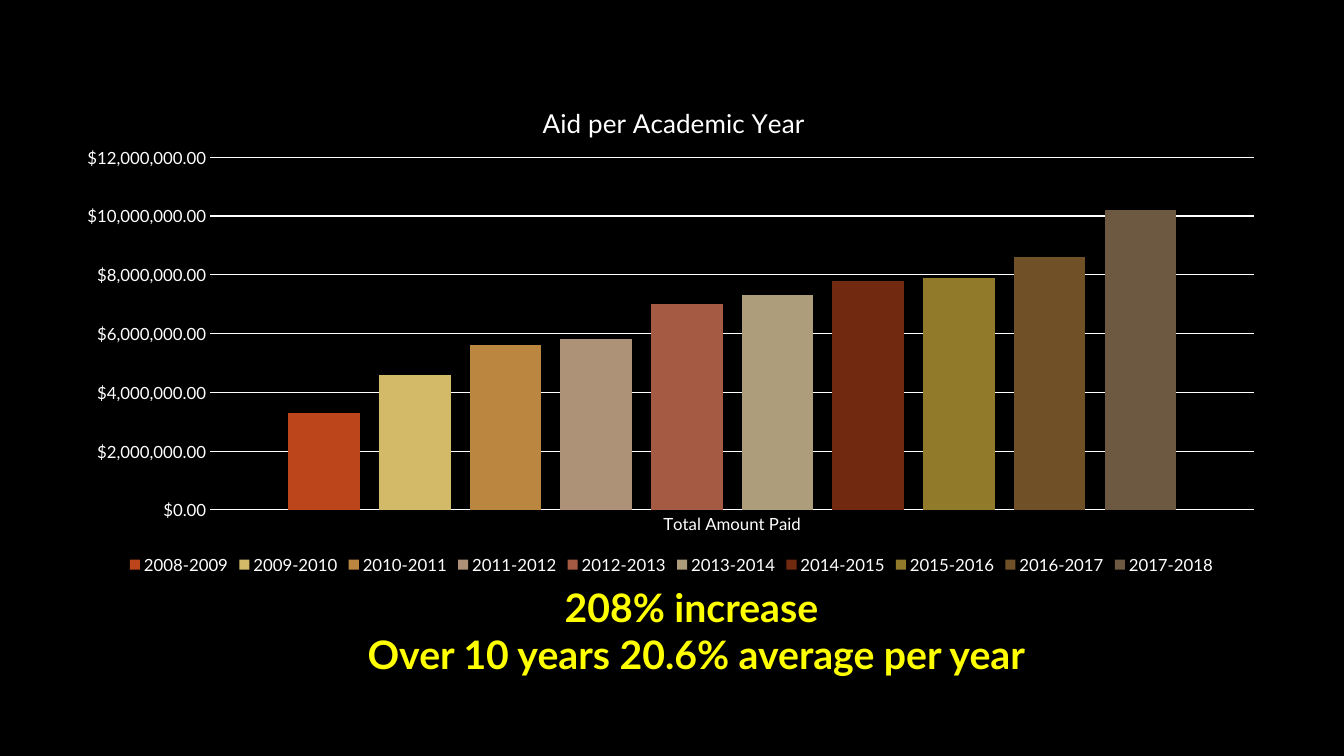
from lxml import etree
from pptx import Presentation
from pptx import util as u
from pptx.chart.data import CategoryChartData
from pptx.dml.color import RGBColor
from pptx.enum import chart as ch, text
from pptx.oxml import ns

FONT = "Lato"
COLORS = {"background": "000000", "chart": "FFFFFF", "callout": "FFFF00"}
AID = [  # academic year, total amount paid, bar colour
    ("2008-2009", 3300000, "BC451B"),
    ("2009-2010", 4600000, "D3BA68"),
    ("2010-2011", 5600000, "BB8640"),
    ("2011-2012", 5800000, "AD9277"),
    ("2012-2013", 7000000, "A55A43"),
    ("2013-2014", 7300000, "AD9D7B"),
    ("2014-2015", 7800000, "712910"),
    ("2015-2016", 7900000, "927A2B"),
    ("2016-2017", 8600000, "705026"),
    ("2017-2018", 10200000, "6D5842"),
]


def style_font(font, size, color, bold=False):
    font.name = FONT
    font.size = u.Pt(size)
    font.bold = bold
    font.color.rgb = RGBColor.from_string(COLORS[color])


def place(layout, **settings):
    """Give a chart part a manual layout, in fractions of the chart."""
    manual = etree.SubElement(layout, ns.qn("c:manualLayout"))
    for tag, value in settings.items():
        etree.SubElement(manual, ns.qn(f"c:{tag}")).set("val", str(value))


prs = Presentation()
prs.slide_width, prs.slide_height = u.Inches(13.33), u.Inches(7.5)
s = prs.slides.add_slide(prs.slide_layouts[6])
s.background.fill.solid()
s.background.fill.fore_color.rgb = RGBColor.from_string(COLORS["background"])

# Callout under the chart
sp = s.shapes.add_textbox(u.Inches(2.95), u.Inches(5.74), u.Inches(7.91), u.Inches(1.04))
tf = sp.text_frame
tf.word_wrap = True
tf.text = "208% increase \nOver 10 years 20.6% average per year"
for p in tf.paragraphs:
    p.alignment = text.PP_ALIGN.CENTER
    style_font(p.runs[0].font, 28, "callout", bold=True)

# Column chart, one series per academic year
data = CategoryChartData(number_format='"$"#,##0.00')
data.categories = ["Total Amount Paid"]
for year, amount, _ in AID:
    data.add_series(year, [amount])
chart = s.shapes.add_chart(
    ch.XL_CHART_TYPE.COLUMN_CLUSTERED,
    u.Inches(0.64), u.Inches(0.74), u.Inches(12.04), u.Inches(5), data).chart
style_font(chart.font, 10, "chart")
plot = chart.plots[0]
plot.vary_by_categories = False
plot.gap_width = 219
plot.overlap = -27
for series, (_, _, color) in zip(plot.series, AID):
    series.format.fill.solid()
    series.format.fill.fore_color.rgb = RGBColor.from_string(color)

# Chart title
chart.has_title = True
title = chart.chart_title
title.include_in_layout = False
title.text_frame.text = "Aid per Academic Year"
style_font(title.text_frame.paragraphs[0].runs[0].font, 18.6, "chart")

# Axes and gridlines
cat, val = chart.category_axis, chart.value_axis
for axis in (cat, val):
    axis.major_tick_mark = axis.minor_tick_mark = ch.XL_TICK_MARK.NONE
    style_font(axis.tick_labels.font, 12, "chart")
val.minimum_scale, val.maximum_scale, val.major_unit = 0, 12000000, 2000000
val.tick_labels.number_format = '"$"#,##0.00'
val.tick_labels.number_format_is_linked = False
val.format.line.fill.background()
val.has_major_gridlines = True
for line in (cat.format.line, val.major_gridlines.format.line):
    line.width = u.Pt(0.75)
    line.color.rgb = RGBColor.from_string(COLORS["chart"])

# Legend
chart.has_legend = True
chart.legend.position = ch.XL_LEGEND_POSITION.BOTTOM
chart.legend.include_in_layout = False
style_font(chart.legend.font, 12, "chart")

# Positions of the title and the plot area
title_layout = title._element.get_or_add_layout() if hasattr(
    title._element, "get_or_add_layout") else title._element.find(ns.qn("c:layout"))
if title_layout is None:
    title_layout = etree.Element(ns.qn("c:layout"))
    title._element.find(ns.qn("c:tx")).addnext(title_layout)
place(title_layout, xMode="edge", yMode="edge", x=0.39, y=0.05)
plot_area = chart._chartSpace.chart.plotArea
plot_layout = plot_area.find(ns.qn("c:layout"))
if plot_layout is None:
    plot_layout = etree.Element(ns.qn("c:layout"))
    plot_area.insert(0, plot_layout)
place(plot_layout, layoutTarget="inner", xMode="edge", yMode="edge",
      x=0.12, y=0.164, w=0.86, h=0.7)

prs.save("out.pptx")
